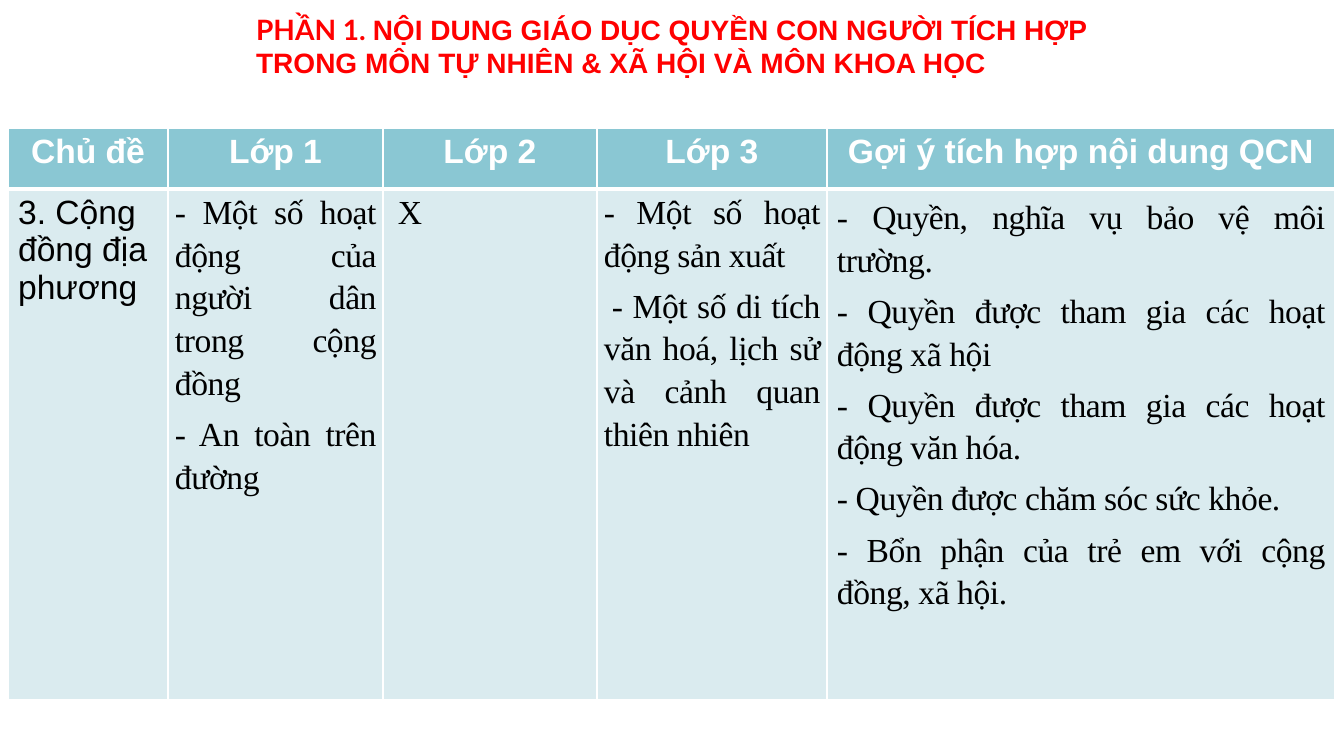
"""Build a slide with a heading and a table of human rights topics by grade."""
import lxml.etree
import pptx
import pptx.dml.color
import pptx.enum.text
import pptx.oxml.ns
import pptx.util

SCALE = 12192000 / 1344
THEME = {
    "red": pptx.dml.color.RGBColor.from_string("FF0000"),
    "white": pptx.dml.color.RGBColor.from_string("FFFFFF"),
    "black": pptx.dml.color.RGBColor.from_string("000000"),
    "header": pptx.dml.color.RGBColor.from_string("8AC7D3"),
    "body": pptx.dml.color.RGBColor.from_string("DAEBEF"),
    "sans": "Arial",
    "serif": "Times New Roman",
    "title_lead": "Lato",
    "title_size": pptx.util.Pt(20),
    "table_size": pptx.util.Pt(24),
}
ALIGN = pptx.enum.text.PP_ALIGN


def px(length):
    """Turn pixels into EMU."""
    return pptx.util.Emu(round(length * SCALE))


def style_cell(cell, fill, bottom_width):
    """Fill a cell and draw its white borders."""
    cell.fill.solid()
    cell.fill.fore_color.rgb = fill
    properties = cell._tc.get_or_add_tcPr()
    widths = {"a:lnL": 1, "a:lnR": 1, "a:lnT": 1, "a:lnB": bottom_width}
    for position, (tag, width) in enumerate(widths.items()):
        line = lxml.etree.Element(pptx.oxml.ns.qn(tag), w=str(pptx.util.Pt(width)))
        solid = lxml.etree.SubElement(line, pptx.oxml.ns.qn("a:solidFill"))
        lxml.etree.SubElement(solid, pptx.oxml.ns.qn("a:srgbClr"), val=str(THEME["white"]))
        properties.insert(position, line)


presentation = pptx.Presentation()
presentation.slide_width = px(1344)
presentation.slide_height = px(756)
slide = presentation.slides.add_slide(presentation.slide_layouts[5])

title = slide.shapes.title
title.left, title.top, title.width, title.height = px(246), px(7), px(883), px(114)
title.text_frame.word_wrap = True
title.text_frame.auto_size = pptx.enum.text.MSO_AUTO_SIZE.NONE
title.text_frame.vertical_anchor = pptx.enum.text.MSO_ANCHOR.TOP
paragraph = title.text_frame.paragraphs[0]
paragraph.alignment = ALIGN.LEFT
paragraph.font.size = THEME["title_size"]
paragraph.font.bold = True
paragraph.font.color.rgb = THEME["red"]
title_runs = [
    ("PHẦN 1. ", THEME["title_lead"]),
    ("NỘI DUNG GIÁO DỤC QUYỀN CON NGƯỜI TÍCH HỢP TRONG MÔN TỰ NHIÊN & XÃ HỘI VÀ MÔN KHOA HỌC",
     THEME["sans"]),
]
for text, font_name in title_runs:
    run = paragraph.add_run()
    run.text = text
    run.font.name = font_name

columns = [
    ("Chủ đề", 160, ["3. Cộng đồng địa phương"]),
    ("Lớp 1", 215, ["- Một số hoạt động của người dân trong cộng đồng", "- An toàn trên đường"]),
    ("Lớp 2", 214, ["X"]),
    ("Lớp 3", 230, ["- Một số hoạt động sản xuất",
                    "- Một số di tích văn hoá, lịch sử và cảnh quan thiên nhiên"]),
    ("Gợi ý tích hợp nội dung QCN", 508, [
        "- Quyền, nghĩa vụ bảo vệ môi trường.",
        "- Quyền được tham gia các hoạt động xã hội",
        "- Quyền được tham gia các hoạt động văn hóa.",
        "- Quyền được chăm sóc sức khỏe.",
        "- Bổn phận của trẻ em với cộng đồng, xã hội.",
    ]),
]
first_line_indents = {(2, 0): 8, (3, 1): 8}
table_width = sum(width for _, width, _ in columns)
table = slide.shapes.add_table(2, len(columns), px(8), px(128), px(table_width), px(572)).table
table.horz_banding = False
table.rows[0].height = px(61)
table.rows[1].height = px(511)

for column, (heading, width, topics) in enumerate(columns):
    table.columns[column].width = px(width)
    header = table.cell(0, column)
    style_cell(header, THEME["header"], 3)
    header.text = heading
    paragraph = header.text_frame.paragraphs[0]
    paragraph.alignment = ALIGN.CENTER
    paragraph.font.name = THEME["sans"]
    paragraph.font.size = THEME["table_size"]
    paragraph.font.bold = True
    paragraph.font.color.rgb = THEME["white"]

    body = table.cell(1, column)
    style_cell(body, THEME["body"], 1)
    body.text = "\n".join(topics)
    if column in (1, 2, 3):
        body.margin_left = body.margin_right = px(7)
        body.margin_top = body.margin_bottom = 0
    for row, paragraph in enumerate(body.text_frame.paragraphs):
        if column > 0:
            paragraph.alignment = ALIGN.JUSTIFY
            paragraph.line_spacing = 1.15
            paragraph.space_before = pptx.util.Pt(3 if row else 0)
            paragraph.space_after = pptx.util.Pt(3)
            indent = first_line_indents.get((column, row), 0)
            paragraph._p.get_or_add_pPr().set("indent", str(px(indent)))
            paragraph.runs[0]._r.get_or_add_rPr().set("spc", "-30")
        paragraph.font.name = THEME["serif"] if column else THEME["sans"]
        paragraph.font.size = THEME["table_size"]
        paragraph.font.bold = False
        paragraph.font.color.rgb = THEME["black"]

presentation.save("out.pptx")
